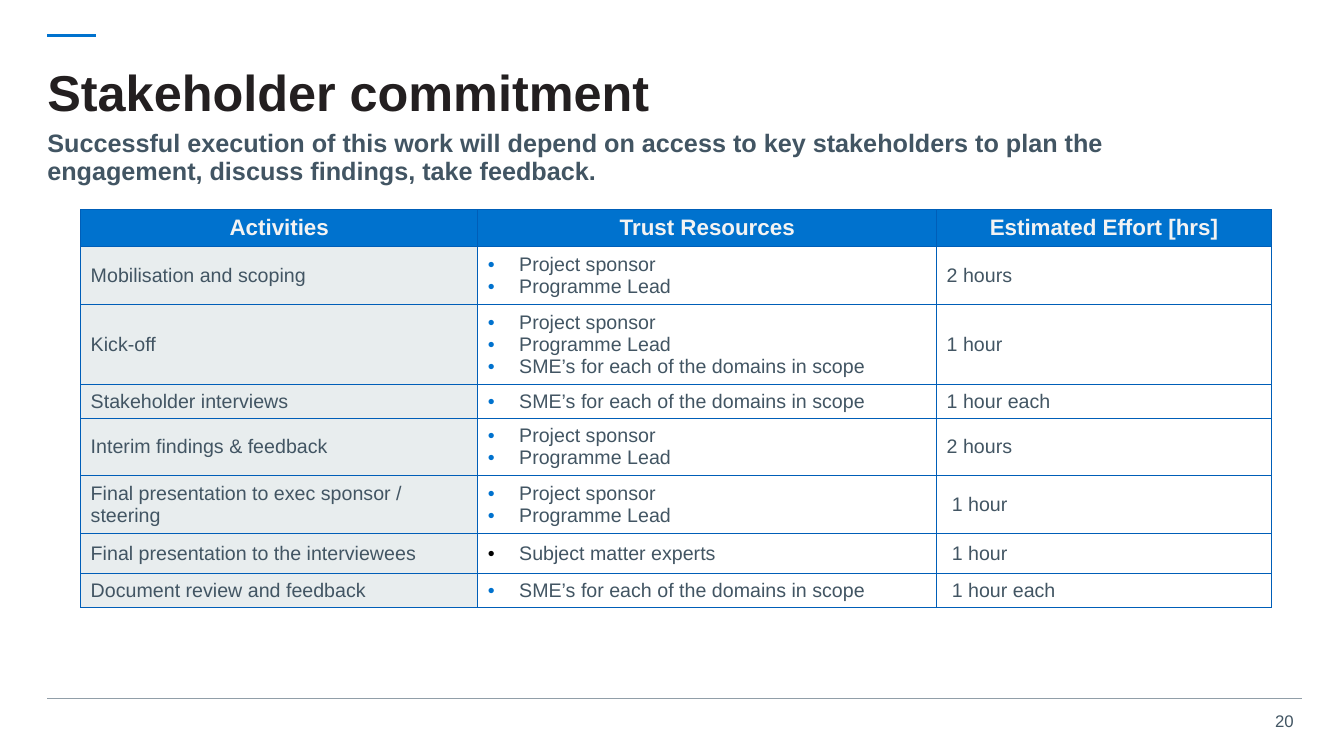
from lxml.etree import SubElement
from pptx import Presentation
from pptx.dml.color import RGBColor
from pptx.enum.shapes import MSO_CONNECTOR
from pptx.enum.text import MSO_ANCHOR, PP_ALIGN
from pptx.oxml.ns import qn
from pptx.util import Inches, Pt

BLUE, BORDER, SLATE = "0072CE", "005EB8", "425563"
INK, PALE, OFF_WHITE, GREY, BLACK = "231F20", "E8EDEE", "F3F3F3", "919EA8", "000000"

SPONSOR, LEAD = "Project sponsor", "Programme Lead"
DOMAIN_SMES = "SME’s for each of the domains in scope"
HEADINGS = ["Activities", "Trust Resources", "Estimated Effort [hrs]"]
COLUMN_WIDTHS = [3.94, 4.55, 3.32]
HEADING_HEIGHT = 0.35
ACTIVITIES = [
    ("Mobilisation and scoping", [SPONSOR, LEAD], "2 hours", 0.57, BLUE, 0),
    ("Kick-off", [SPONSOR, LEAD, DOMAIN_SMES], "1 hour", 0.76, BLUE, 0),
    ("Stakeholder interviews", [DOMAIN_SMES], "1 hour each", 0.32, BLUE, 0),
    ("Interim findings & feedback", [SPONSOR, LEAD], "2 hours", 0.57, BLUE, 0),
    ("Final presentation to exec sponsor / steering", [SPONSOR, LEAD], "1 hour", 0.54, BLUE, 0.05),
    ("Final presentation to the interviewees", ["Subject matter experts"], "1 hour", 0.4, BLACK, 0.05),
    ("Document review and feedback", [DOMAIN_SMES], "1 hour each", 0.32, BLUE, 0.05),
]


def rgb(value):
    return RGBColor.from_string(value)


class SlideBuilder:
    font = "Arial"

    def __init__(self, slide):
        self.slide = slide

    def fill_text(self, frame, lines, size, color, bold=False, align=PP_ALIGN.LEFT, spacing=None):
        frame.text = "\n".join(lines)
        for paragraph in frame.paragraphs:
            paragraph.alignment = align
            if spacing:
                paragraph.line_spacing = spacing
            for run in paragraph.runs:
                run.font.name = self.font
                run.font.size = Pt(size)
                run.font.bold = bold
                run.font.color.rgb = rgb(color)

    def text(self, box, content, size, color, margins=(0, 0), anchor=MSO_ANCHOR.TOP, **style):
        frame = self.slide.shapes.add_textbox(*map(Inches, box)).text_frame
        frame.word_wrap = True
        frame.vertical_anchor = anchor
        frame.margin_left = frame.margin_right = Inches(margins[0])
        frame.margin_top = frame.margin_bottom = Inches(margins[1])
        self.fill_text(frame, [content], size, color, **style)

    def rule(self, left, right, y, color, width):
        line = self.slide.shapes.add_connector(
            MSO_CONNECTOR.STRAIGHT, Inches(left), Inches(y), Inches(right), Inches(y))
        line.line.color.rgb = rgb(color)
        line.line.width = Pt(width)
        SubElement(line._element.spPr, qn("a:effectLst"))

    def indent(self, paragraph, left, hanging=0):
        properties = paragraph._p.get_or_add_pPr()
        properties.set("marL", str(Inches(left)))
        properties.set("indent", str(-Inches(hanging)))
        return properties

    def bullet(self, paragraph, color):
        properties = self.indent(paragraph, 0.31, 0.31)
        bullet_color = SubElement(properties, qn("a:buClr"))
        SubElement(bullet_color, qn("a:srgbClr"), val=color)
        SubElement(properties, qn("a:buFont"), typeface=self.font)
        SubElement(properties, qn("a:buChar"), char="•")

    def cell(self, cell, lines, size, color, fill=None, **style):
        properties = cell._tc.get_or_add_tcPr()
        for side in ("lnL", "lnR", "lnT", "lnB"):
            edge = SubElement(properties, qn(f"a:{side}"), w=str(Pt(0.75)))
            SubElement(SubElement(edge, qn("a:solidFill")), qn("a:srgbClr"), val=BORDER)
        if fill:
            cell.fill.solid()
            cell.fill.fore_color.rgb = rgb(fill)
        else:
            cell.fill.background()
        cell.vertical_anchor = MSO_ANCHOR.MIDDLE
        cell.margin_left = cell.margin_right = Inches(0.1)
        cell.margin_top = cell.margin_bottom = Inches(0.05)
        self.fill_text(cell.text_frame, lines, size, color, **style)
        return cell.text_frame.paragraphs

    def commitment_table(self, left, top):
        heights = [HEADING_HEIGHT] + [activity[3] for activity in ACTIVITIES]
        table = self.slide.shapes.add_table(
            len(heights), len(HEADINGS), Inches(left), Inches(top),
            Inches(sum(COLUMN_WIDTHS)), Inches(sum(heights))).table
        table.horz_banding = False
        for column, width in zip(table.columns, COLUMN_WIDTHS):
            column.width = Inches(width)
        for row, height in zip(table.rows, heights):
            row.height = Inches(height)
        for column, heading in enumerate(HEADINGS):
            self.cell(table.cell(0, column), [heading], 16, OFF_WHITE, BLUE,
                      bold=True, align=PP_ALIGN.CENTER)
        for row, (activity, resources, effort, _, bullet_color, inset) in enumerate(ACTIVITIES, 1):
            self.cell(table.cell(row, 0), [activity], 14, SLATE, PALE)
            for resource in self.cell(table.cell(row, 1), resources, 14, SLATE):
                self.bullet(resource, bullet_color)
            hours = self.cell(table.cell(row, 2), [effort], 14, SLATE)
            self.indent(hours[0], inset)


def main():
    deck = Presentation()
    deck.slide_width, deck.slide_height = Inches(13.33), Inches(7.5)
    builder = SlideBuilder(deck.slides.add_slide(deck.slide_layouts[6]))
    builder.text((12.42, 7, 0.51, 0.3), "20", 12, SLATE, margins=(0.1, 0.05), align=PP_ALIGN.RIGHT)
    builder.rule(0.47, 0.95, 0.35, BLUE, 2)
    builder.rule(0.47, 12.91, 6.93, GREY, 0.75)
    builder.text((0.47, 1.29, 12.04, 0.63),
                 "Successful execution of this work will depend on access to key stakeholders "
                 "to plan the engagement, discuss findings, take feedback.",
                 18, SLATE, bold=True, spacing=0.92)
    builder.text((0.47, 0.47, 12.47, 0.95), "Stakeholder commitment", 36, INK,
                 anchor=MSO_ANCHOR.MIDDLE, bold=True, spacing=0.9)
    builder.commitment_table(0.8, 2.08)
    deck.save("out.pptx")


if __name__ == "__main__":
    main()
